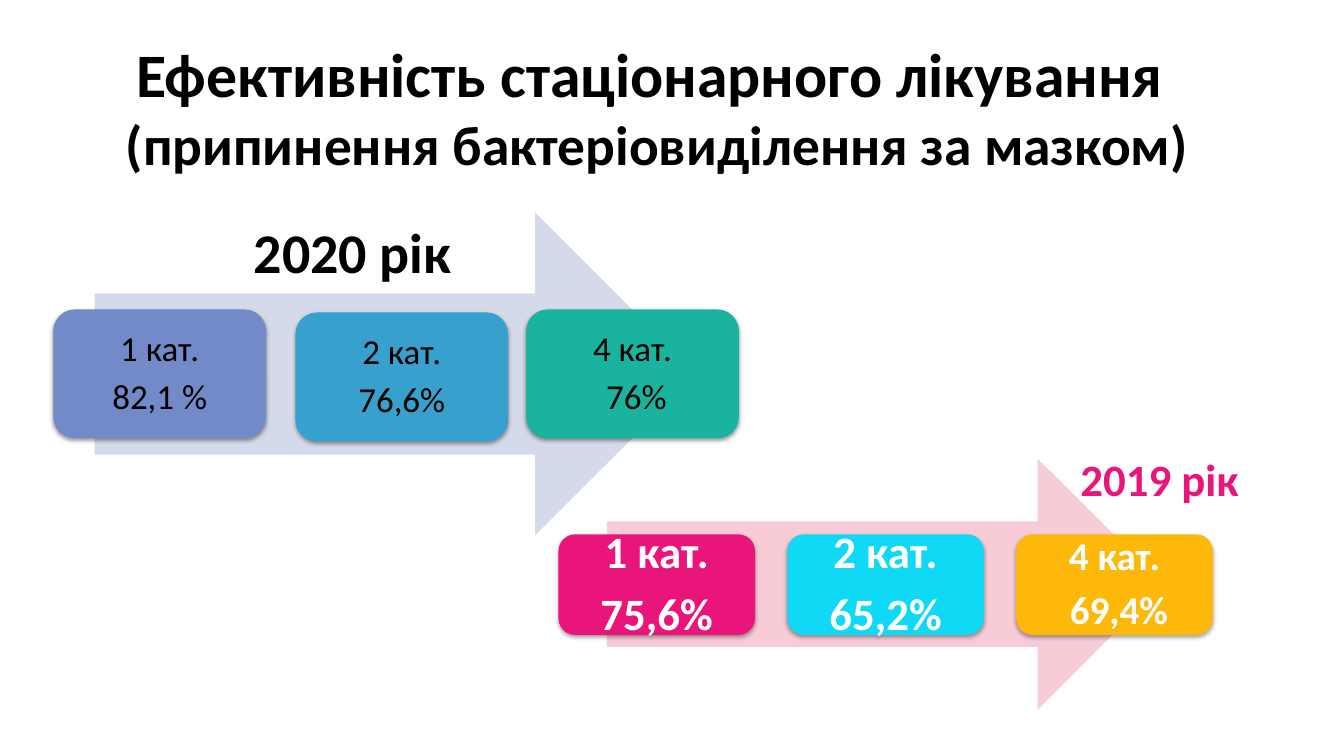
from dataclasses import dataclass

from lxml.etree import SubElement
from pptx import Presentation
from pptx.dml.color import RGBColor
from pptx.enum.shapes import MSO_SHAPE as Preset
from pptx.enum.text import MSO_ANCHOR as Anchor, MSO_AUTO_SIZE as AutoSize, PP_ALIGN as Align
from pptx.oxml.ns import qn
from pptx.shapes.autoshape import Shape
from pptx.shapes.shapetree import GroupShapes, SlideShapes
from pptx.text.text import TextFrame, _Paragraph as Paragraph
from pptx.util import Inches, Length, Pt

WIDTH, HEIGHT = Inches(13.33), Inches(7.5)
FONT = "Calibri"
BLACK = RGBColor(0x00, 0x00, 0x00)
WHITE = RGBColor(0xFF, 0xFF, 0xFF)
PINK = RGBColor(0xEA, 0x15, 0x7A)
PALE_PINK = RGBColor(0xF7, 0xCC, 0xD7)
CYAN = RGBColor(0x0F, 0xD9, 0xF4)
AMBER = RGBColor(0xFE, 0xB8, 0x0A)
PERIWINKLE = RGBColor(0x73, 0x8A, 0xC8)
PALE_BLUE = RGBColor(0xD5, 0xDA, 0xEB)
BLUE = RGBColor(0x38, 0xA0, 0xCC)
TEAL = RGBColor(0x1A, 0xB3, 0x9F)


@dataclass(frozen=True)
class Area:
    """A rectangle in percent of the slide's width and height."""
    left: float
    top: float
    width: float
    height: float

    def lengths(self) -> tuple[Length, ...]:
        sides = (WIDTH, HEIGHT, WIDTH, HEIGHT)
        shares = (self.left, self.top, self.width, self.height)
        return tuple(Length(round(side * share / 100)) for side, share in zip(sides, shares))


@dataclass(frozen=True)
class TextStyle:
    size: float
    color: RGBColor
    bold: bool = True


@dataclass(frozen=True)
class Shadow:
    opacity: int
    distance: float
    blur: float = 3.1


@dataclass(frozen=True)
class Card:
    area: Area
    lines: tuple[str, str]
    fill: RGBColor
    style: TextStyle


@dataclass(frozen=True)
class Year:
    label: str
    label_area: Area
    label_style: TextStyle
    arrow: Area
    arrow_fill: RGBColor
    inset: float
    shadow: Shadow
    cards: tuple[Card, ...]


TITLE_AREA = Area(1.73, 5.47, 94.35, 17.2)
TITLE = (
    ("Ефективність стаціонарного лікування ", TextStyle(44.1, BLACK)),
    ("(припинення бактеріовиділення за мазком)", TextStyle(39.6, BLACK)),
)
LARGE_WHITE, SMALL_WHITE = TextStyle(32, WHITE), TextStyle(28, WHITE)
PLAIN_BLACK = TextStyle(25, BLACK, bold=False)


def card_2019(column: int) -> Area:
    return Area(41.55 + 17.03 * column, 70.67, 14.63, 13.33)


def card_2020(left: float, top: float) -> Area:
    return Area(left, top, 15.83, 17.07)


YEARS = (
    Year("2019 рік", Area(79.65, 59.07, 13.43, 8.53), TextStyle(32, PINK),
         Area(45.15, 60.67, 41.4, 33.2), PALE_PINK, 0.18, Shadow(35, 1.8), (
             Card(card_2019(0), ("1 кат.", "75,6%"), PINK, LARGE_WHITE),
             Card(card_2019(1), ("2 кат.", "65,2%"), CYAN, LARGE_WHITE),
             Card(card_2019(2), ("4 кат.", " 69,4%"), AMBER, SMALL_WHITE),
         )),
    Year("2020 рік", Area(18.15, 28.13, 16.35, 10.27), TextStyle(40, BLACK),
         Area(7.05, 28.13, 44.78, 42.67), PALE_BLUE, 0.16, Shadow(38, 1.6), (
             Card(card_2020(3.97, 40.93), ("1 кат.", "82,1 %"), PERIWINKLE, PLAIN_BLACK),
             Card(card_2020(21.98, 41.33), ("2 кат.", "76,6%"), BLUE, PLAIN_BLACK),
             Card(card_2020(39.15, 40.93), ("4 кат.", " 76%"), TEAL, PLAIN_BLACK),
         )),
)


def add_span(para: Paragraph, text: str, style: TextStyle) -> None:
    span = para.add_run()
    span.text = text
    span.font.name = FONT
    span.font.size = Pt(style.size)
    span.font.bold = style.bold
    span.font.color.rgb = style.color


def set_insets(frame: TextFrame, inset: float) -> None:
    frame.margin_left = frame.margin_right = Inches(inset)
    frame.margin_top = frame.margin_bottom = Inches(inset)


def add_filled(shapes: GroupShapes, preset: Preset, area: Area, fill: RGBColor) -> Shape:
    shape = shapes.add_shape(preset, *area.lengths())
    shape.shadow.inherit = False
    shape.fill.solid()
    shape.fill.fore_color.rgb = fill
    shape.line.fill.background()
    return shape


def cast_shadow(shape: Shape, shadow: Shadow) -> None:
    """Put a soft black shadow straight below the shape."""
    effects = shape.element.spPr.find(qn("a:effectLst"))
    outer = SubElement(effects, qn("a:outerShdw"), blurRad=str(Pt(shadow.blur)),
                       dist=str(Pt(shadow.distance)), dir="5400000", rotWithShape="0")
    black = SubElement(outer, qn("a:srgbClr"), val=str(BLACK))
    SubElement(black, qn("a:alpha"), val=str(shadow.opacity * 1000))


def add_card(shapes: GroupShapes, card: Card, year: Year) -> None:
    box = add_filled(shapes, Preset.ROUNDED_RECTANGLE, card.area, card.fill)
    cast_shadow(box, year.shadow)
    frame = box.text_frame
    frame.word_wrap = True
    frame.vertical_anchor = Anchor.MIDDLE
    set_insets(frame, year.inset)
    for index, line in enumerate(card.lines):
        para = frame.add_paragraph() if index else frame.paragraphs[0]
        para.alignment = Align.CENTER
        para.line_spacing = 0.9
        para.space_after = Pt(round(card.style.size * 0.3, 1))
        add_span(para, line, card.style)


def add_title(shapes: SlideShapes) -> None:
    frame = shapes.add_textbox(*TITLE_AREA.lengths()).text_frame
    frame.word_wrap = True
    frame.vertical_anchor = Anchor.MIDDLE
    para = frame.paragraphs[0]
    para.alignment = Align.CENTER
    for index, (text, style) in enumerate(TITLE):
        if index:
            para.add_line_break()
        add_span(para, text, style)


def add_year(shapes: SlideShapes, year: Year) -> None:
    """Draw a year's arrow and cards as one group, then its label."""
    group = shapes.add_group_shape()
    add_filled(group.shapes, Preset.RIGHT_ARROW, year.arrow, year.arrow_fill)
    for card in year.cards:
        add_card(group.shapes, card, year)
    frame = shapes.add_textbox(*year.label_area.lengths()).text_frame
    frame.word_wrap = False
    frame.auto_size = AutoSize.SHAPE_TO_FIT_TEXT
    add_span(frame.paragraphs[0], year.label, year.label_style)


def main() -> None:
    deck = Presentation()
    deck.slide_width, deck.slide_height = WIDTH, HEIGHT
    page = deck.slides.add_slide(deck.slide_layouts[6])
    add_title(page.shapes)
    for year in YEARS:
        add_year(page.shapes, year)
    deck.save("out.pptx")


if __name__ == "__main__":
    main()
